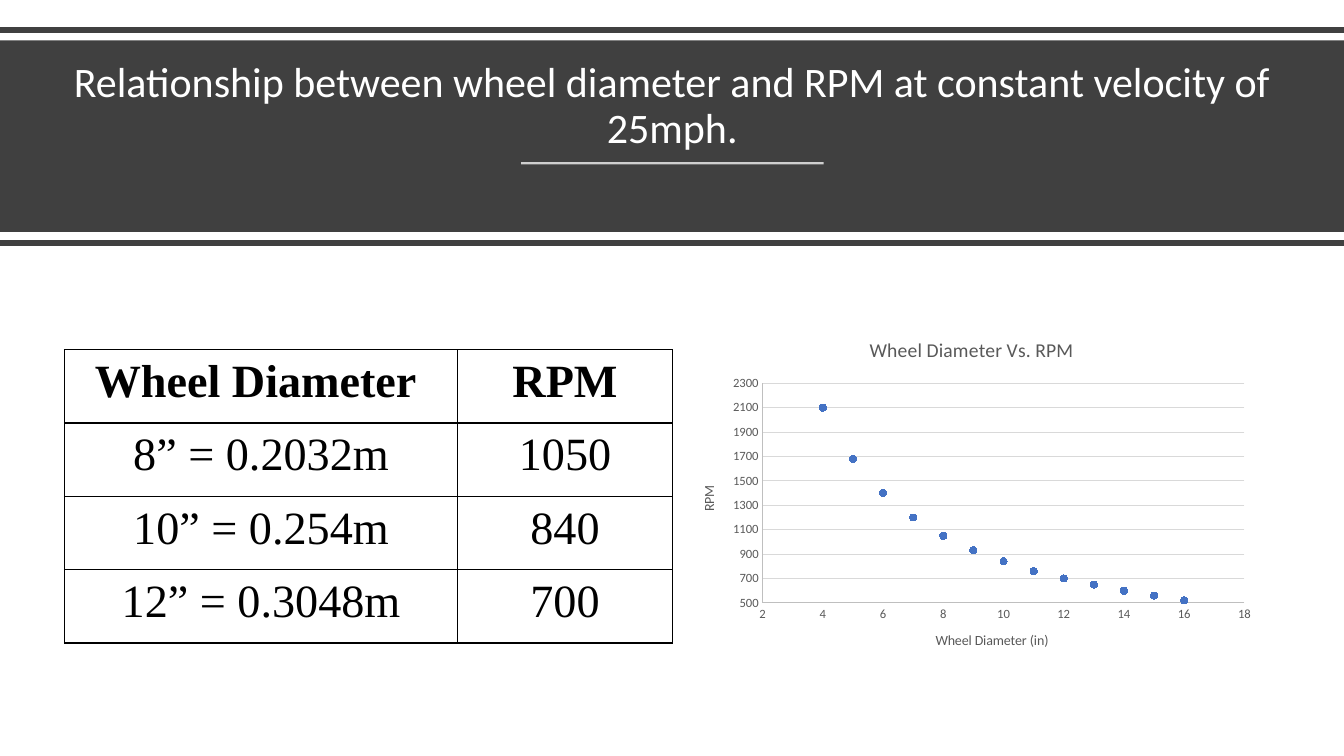
"""Build a slide on wheel diameter and RPM with a title band, a table and a scatter chart."""
from dataclasses import dataclass
from typing import Any

from lxml.etree import SubElement
from pptx import Presentation
from pptx.chart.data import XyChartData
from pptx.dml.color import RGBColor
from pptx.enum.chart import XL_CHART_TYPE, XL_MARKER_STYLE, XL_TICK_MARK
from pptx.enum.shapes import MSO_CONNECTOR, MSO_SHAPE
from pptx.enum.text import MSO_ANCHOR, MSO_AUTO_SIZE, PP_ALIGN
from pptx.oxml import parse_xml
from pptx.oxml.ns import nsdecls, qn
from pptx.util import Inches, Length, Pt


@dataclass(frozen=True)
class Theme:
    dark: str = "404040"
    white: str = "FFFFFF"
    black: str = "000000"
    gray: str = "595959"
    axis: str = "BFBFBF"
    grid: str = "D9D9D9"
    dot: str = "4472C4"
    sans: str = "Calibri"
    serif: str = "Times New Roman"
    head: float = 30
    cell: float = 33
    plot: float = 14
    name: float = 10
    tick: float = 9


@dataclass(frozen=True)
class Box:
    col: float
    row: float
    wide: float
    high: float

    def spans(self) -> tuple[Length, ...]:
        return tuple(grid(n) for n in (self.col, self.row, self.wide, self.high))


@dataclass(frozen=True)
class Rule:
    start: float
    end: float
    row: float
    color: str
    width: float
    alpha: int = 100


@dataclass(frozen=True)
class Scale:
    name: str
    low: int
    high: int
    step: int
    turn: int = 0


LOOK = Theme()
WIDE, HIGH = 133.33, 75
BAND = Box(0, 4, WIDE, 19)
HEAD = Box(5.8, 5.4, 121.8, 10.2)
TABLE = Box(6.4, 34.7, 60.3, 29.1)
CHART = Box(67.6, 31.8, 57.6, 34.6)
COLS = (39, 21.3)
EDGES = (Rule(0, WIDE, 3, LOOK.dark, 4), Rule(0, WIDE, 24.1, LOOK.dark, 4))
ACCENT = Rule(51.7, 81.7, 16.2, LOOK.white, 1.5, 75)
TITLE = "Relationship between wheel diameter and RPM at constant velocity of 25mph."
ROWS = (
    ("Wheel Diameter ", "RPM"),
    ("8” = 0.2032m", "1050"),
    ("10” = 0.254m", "840"),
    ("12” = 0.3048m", "700"),
)
SPEEDS = (2100, 1680, 1400, 1200, 1050, 930, 840, 760, 700, 650, 600, 560, 520)
ACROSS = Scale("Wheel Diameter (in)", 2, 18, 2)
UP = Scale("RPM", 500, 2300, 200, -5400000)
PLOT = {"x": 0.14, "y": 0.18, "w": 0.83, "h": 0.63}


def grid(count: float) -> Length:
    """Turn grid cells of a tenth of an inch into a length."""
    return Inches(count / 10)


def apply(item: Any, form: dict[str, Any]) -> None:
    """Set each named value on the item."""
    for key, value in form.items():
        setattr(item, key, value)


def style(font: Any, face: str, size: float, color: str, bold: bool = False) -> None:
    """Format a font."""
    apply(font, {"name": face, "size": Pt(size), "bold": bold})
    font.color.rgb = RGBColor.from_string(color)


def stroke(line: Any, color: str, width: float) -> None:
    """Format a line."""
    line.color.rgb = RGBColor.from_string(color)
    line.width = Pt(width)


def draw_rule(slide: Any, rule: Rule) -> None:
    """Draw a level line."""
    ends = (grid(n) for n in (rule.start, rule.row, rule.end, rule.row))
    line = slide.shapes.add_connector(MSO_CONNECTOR.STRAIGHT, *ends)
    stroke(line.line, rule.color, rule.width)
    props = line._element.spPr
    if rule.alpha < 100:
        tint = props.find(".//" + qn("a:srgbClr"))
        SubElement(tint, qn("a:alpha"), val=str(rule.alpha * 1000))
    SubElement(props, qn("a:effectLst"))


def draw_band(slide: Any) -> None:
    """Draw the dark band behind the title."""
    band = slide.shapes.add_shape(MSO_SHAPE.RECTANGLE, *BAND.spans())
    band.shadow.inherit = False
    band.fill.solid()
    band.fill.fore_color.rgb = RGBColor.from_string(LOOK.dark)
    band.line.fill.background()


def draw_title(slide: Any) -> None:
    """Place the title above the band."""
    title = slide.shapes.title
    apply(title, dict(zip(("left", "top", "width", "height"), HEAD.spans())))
    frame = title.text_frame
    frame.text = TITLE
    apply(frame, {"word_wrap": True, "auto_size": MSO_AUTO_SIZE.NONE,
                  "vertical_anchor": MSO_ANCHOR.BOTTOM})
    para = frame.paragraphs[0]
    apply(para, {"alignment": PP_ALIGN.CENTER, "line_spacing": 0.9})
    style(para.runs[0].font, LOOK.sans, LOOK.head, LOOK.white)
    slide.shapes._spTree.append(title._element)


def fill_cell(cell: Any, text: str, bold: bool) -> None:
    """Write and frame one table cell."""
    cell.text = text
    apply(cell, {"margin_left": grid(2.1), "margin_right": grid(2.1),
                 "margin_top": grid(0.3), "margin_bottom": 0})
    para = cell.text_frame.paragraphs[0]
    apply(para, {"alignment": PP_ALIGN.CENTER, "line_spacing": 1.07})
    style(para.runs[0].font, LOOK.serif, LOOK.cell, LOOK.black, bold)
    props = cell._tc.get_or_add_tcPr()
    for side in "LRTB":
        edge = SubElement(props, qn(f"a:ln{side}"), w=str(Pt(1)))
        paint = SubElement(edge, qn("a:solidFill"))
        SubElement(paint, qn("a:srgbClr"), val=LOOK.black)
    cell.fill.background()


def draw_table(slide: Any) -> None:
    """Draw the table of diameters and speeds."""
    table = slide.shapes.add_table(len(ROWS), len(COLS), *TABLE.spans()).table
    apply(table, {"first_row": False, "horz_banding": False})
    for col, wide in zip(table.columns, COLS):
        col.width = grid(wide)
    for r, row in enumerate(ROWS):
        for c, text in enumerate(row):
            fill_cell(table.cell(r, c), text, r == 0)


def set_axis(axis: Any, scale: Scale) -> None:
    """Format one chart axis."""
    apply(axis, {"minimum_scale": scale.low, "maximum_scale": scale.high,
                 "major_unit": scale.step, "major_tick_mark": XL_TICK_MARK.NONE,
                 "minor_tick_mark": XL_TICK_MARK.NONE})
    style(axis.tick_labels.font, LOOK.sans, LOOK.tick, LOOK.gray)
    stroke(axis.format.line, LOOK.axis, 0.75)
    frame = axis.axis_title.text_frame
    frame.text = scale.name
    style(frame.paragraphs[0].runs[0].font, LOOK.sans, LOOK.name, LOOK.gray)
    body = axis.axis_title._element.find(".//" + qn("a:bodyPr"))
    body.set("rot", str(scale.turn))


def draw_chart(slide: Any) -> None:
    """Draw the scatter chart."""
    data = XyChartData()
    points = data.add_series("Series 1")
    for inch, speed in enumerate(SPEEDS, 4):
        points.add_data_point(inch, speed)
    chart = slide.shapes.add_chart(XL_CHART_TYPE.XY_SCATTER, *CHART.spans(), data).chart
    apply(chart, {"has_legend": False, "has_title": True})
    style(chart.font, LOOK.sans, LOOK.name, LOOK.black)
    frame = chart.chart_title.text_frame
    frame.text = "Wheel Diameter Vs. RPM"
    style(frame.paragraphs[0].runs[0].font, LOOK.sans, LOOK.plot, LOOK.gray)
    set_axis(chart.category_axis, ACROSS)
    set_axis(chart.value_axis, UP)
    chart.category_axis.has_major_gridlines = False
    stroke(chart.value_axis.major_gridlines.format.line, LOOK.grid, 0.75)
    chart.plots[0].vary_by_categories = False
    series = chart.plots[0].series[0]
    series.smooth = False
    series.format.line.fill.background()
    mark = series.marker
    apply(mark, {"style": XL_MARKER_STYLE.CIRCLE, "size": 5})
    mark.format.fill.solid()
    mark.format.fill.fore_color.rgb = RGBColor.from_string(LOOK.dot)
    stroke(mark.format.line, LOOK.dot, 0.75)
    area = chart._chartSpace.chart.plotArea
    for old in area.findall(qn("c:layout")):
        area.remove(old)
    modes = '<c:layoutTarget val="inner"/><c:xMode val="edge"/><c:yMode val="edge"/>'
    sizes = "".join(f'<c:{key} val="{part}"/>' for key, part in PLOT.items())
    area.insert(0, parse_xml(f'<c:layout {nsdecls("c")}><c:manualLayout>{modes}{sizes}'
                             "</c:manualLayout></c:layout>"))


def main() -> None:
    """Build and save the slide."""
    deck = Presentation()
    apply(deck, {"slide_width": grid(WIDE), "slide_height": grid(HIGH)})
    slide = deck.slides.add_slide(deck.slide_layouts[5])
    draw_band(slide)
    draw_title(slide)
    for rule in (*EDGES, ACCENT):
        draw_rule(slide, rule)
    draw_table(slide)
    draw_chart(slide)
    deck.save("out.pptx")


if __name__ == "__main__":
    main()
